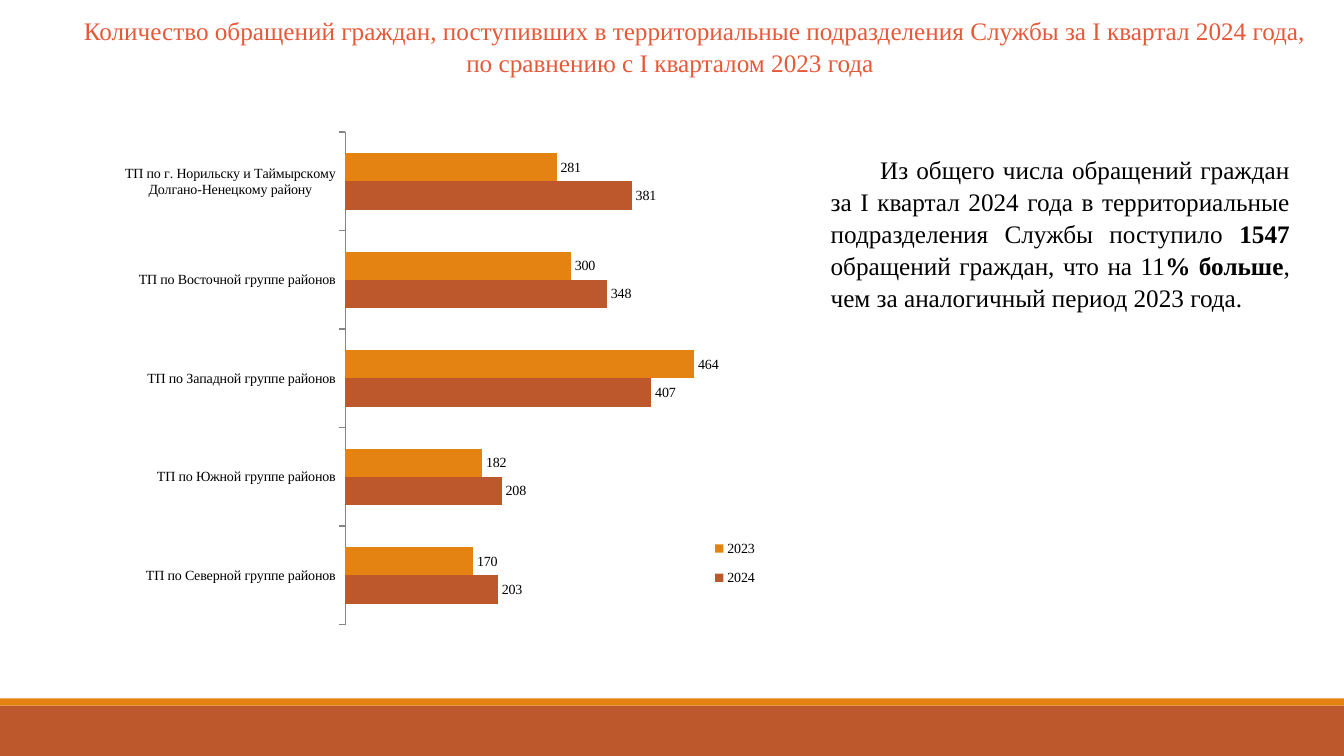
from dataclasses import dataclass

from lxml import etree
from pptx import Presentation
from pptx import util as u
from pptx.chart import data as cd
from pptx.dml import color
from pptx.enum import chart as ce, shapes, text
from pptx.oxml import ns

SERIF = "Times New Roman"
RUST, AMBER, CORAL, BLACK, GREY = "BD582C", "E48312", "E65938", "000000", "868686"
INDENT = u.Inches(0.49)


@dataclass
class Band:
    top: float
    height: float
    hue: str


@dataclass
class Line:
    """One paragraph; each run is its text and whether it is bold."""
    runs: list[tuple[str, bool]]
    indent: int = 0


@dataclass
class Block:
    box: tuple[float, float, float, float]
    align: text.PP_ALIGN
    hue: str
    lines: list[Line]


@dataclass
class Year:
    name: str
    counts: tuple[int, ...]
    hue: str


BANDS = [Band(7, 0.5, RUST), Band(6.93, 0.07, AMBER)]

BLOCKS = [
    Block((0.1, 0.08, 13.09, 0.71), text.PP_ALIGN.CENTER, CORAL, [
        Line([("Количество обращений граждан, поступивших в территориальные "
               "подразделения Службы за I квартал 2024 года,", False)], INDENT),
        Line([("по сравнению с I кварталом 2023 года", False)]),
    ]),
    Block((8.14, 1.46, 4.75, 1.62), text.PP_ALIGN.JUSTIFY, BLACK, [
        Line([("Из общего числа обращений граждан за I квартал 2024 года в "
               "территориальные подразделения Службы поступило ", False),
              ("1547 ", True),
              ("обращений граждан, что на 11", False),
              ("% больше", True),
              (", чем за аналогичный период 2023 года.", False)], INDENT),
    ]),
]

AREAS = [
    "ТП по Северной группе районов",
    "ТП по Южной группе районов",
    "ТП по Западной группе районов",
    "ТП по Восточной группе районов",
    "ТП по г. Норильску и Таймырскому Долгано-Ненецкому району",
]
YEARS = [
    Year("2024", (203, 208, 407, 348, 381), RUST),
    Year("2023", (170, 182, 464, 300, 281), AMBER),
]


def rgb(code: str) -> color.RGBColor:
    return color.RGBColor.from_string(code)


def apply(target, values: dict) -> None:
    for key, value in values.items():
        setattr(target, key, value)


def style(font, size: int, hue: str, bold: bool = False) -> None:
    apply(font, {"name": SERIF, "size": u.Pt(size), "bold": bold})
    font.color.rgb = rgb(hue)


def draw_band(slide, band: Band) -> None:
    bar = slide.shapes.add_shape(shapes.MSO_SHAPE.RECTANGLE, 0, u.Inches(band.top),
                                 u.Inches(13.33), u.Inches(band.height))
    bar.shadow.inherit = False
    bar.fill.solid()
    bar.fill.fore_color.rgb = rgb(band.hue)
    bar.line.fill.background()


def draw_block(slide, block: Block) -> None:
    frame = slide.shapes.add_textbox(*map(u.Inches, block.box)).text_frame
    frame.word_wrap = True
    for i, line in enumerate(block.lines):
        para = frame.add_paragraph() if i else frame.paragraphs[0]
        apply(para, {"alignment": block.align, "line_spacing": 1.06})
        if line.indent:
            para._p.get_or_add_pPr().set("indent", str(line.indent))
        for words, bold in line.runs:
            run = para.add_run()
            run.text = words
            style(run.font, 18, block.hue, bold)


def place(part, box: tuple[float, float, float, float], inner: bool = False) -> None:
    """Fix a chart part at x, y, w, h given as shares of the chart."""
    for old in part.findall(ns.qn("c:layout")):
        part.remove(old)
    layout = etree.Element(ns.qn("c:layout"))
    manual = etree.SubElement(layout, ns.qn("c:manualLayout"))
    marks = [("layoutTarget", "inner")] if inner else []
    marks += [("xMode", "edge"), ("yMode", "edge"), *zip("xywh", box)]
    for tag, value in marks:
        etree.SubElement(manual, ns.qn(f"c:{tag}")).set("val", str(value))
    after = part.find(ns.qn("c:legendPos"))
    part.insert(0 if after is None else part.index(after) + 1, layout)


def draw_chart(slide) -> None:
    data = cd.CategoryChartData()
    data.categories = AREAS
    for year in YEARS:
        data.add_series(year.name, year.counts)
    box = map(u.Inches, (1.12, 1.21, 6.78, 5.09))
    chart = slide.shapes.add_chart(ce.XL_CHART_TYPE.BAR_CLUSTERED, *box, data).chart
    apply(chart, {"has_title": False, "has_legend": True})
    style(chart.font, 10, BLACK)

    plot = chart.plots[0]
    apply(plot, {"gap_width": 150, "overlap": 0, "vary_by_categories": False})
    for series, year in zip(plot.series, YEARS):
        series.format.fill.solid()
        series.format.fill.fore_color.rgb = rgb(year.hue)
        labels = series.data_labels
        apply(labels, {"show_value": True,
                       "position": ce.XL_LABEL_POSITION.OUTSIDE_END})
        style(labels.font, 10, BLACK)

    apply(chart.value_axis, {"visible": False, "has_major_gridlines": False,
                             "minimum_scale": 0, "maximum_scale": 500})
    axis = chart.category_axis
    axis.major_tick_mark = ce.XL_TICK_MARK.OUTSIDE
    style(axis.tick_labels.font, 10, BLACK)
    axis.format.line.width = u.Pt(1)
    axis.format.line.color.rgb = rgb(GREY)

    legend = chart.legend
    apply(legend, {"position": ce.XL_LEGEND_POSITION.RIGHT, "include_in_layout": False})
    style(legend.font, 10, BLACK)
    place(legend._element, (0.86, 0.79, 0.1, 0.14))
    place(plot._element.getparent(), (0.34, 0.02, 0.55, 0.96), inner=True)


def main() -> None:
    deck = Presentation()
    apply(deck, {"slide_width": u.Inches(13.33), "slide_height": u.Inches(7.5)})
    slide = deck.slides.add_slide(deck.slide_layouts[6])
    for band in BANDS:
        draw_band(slide, band)
    for block in BLOCKS:
        draw_block(slide, block)
    draw_chart(slide)
    deck.save("out.pptx")


if __name__ == "__main__":
    main()
